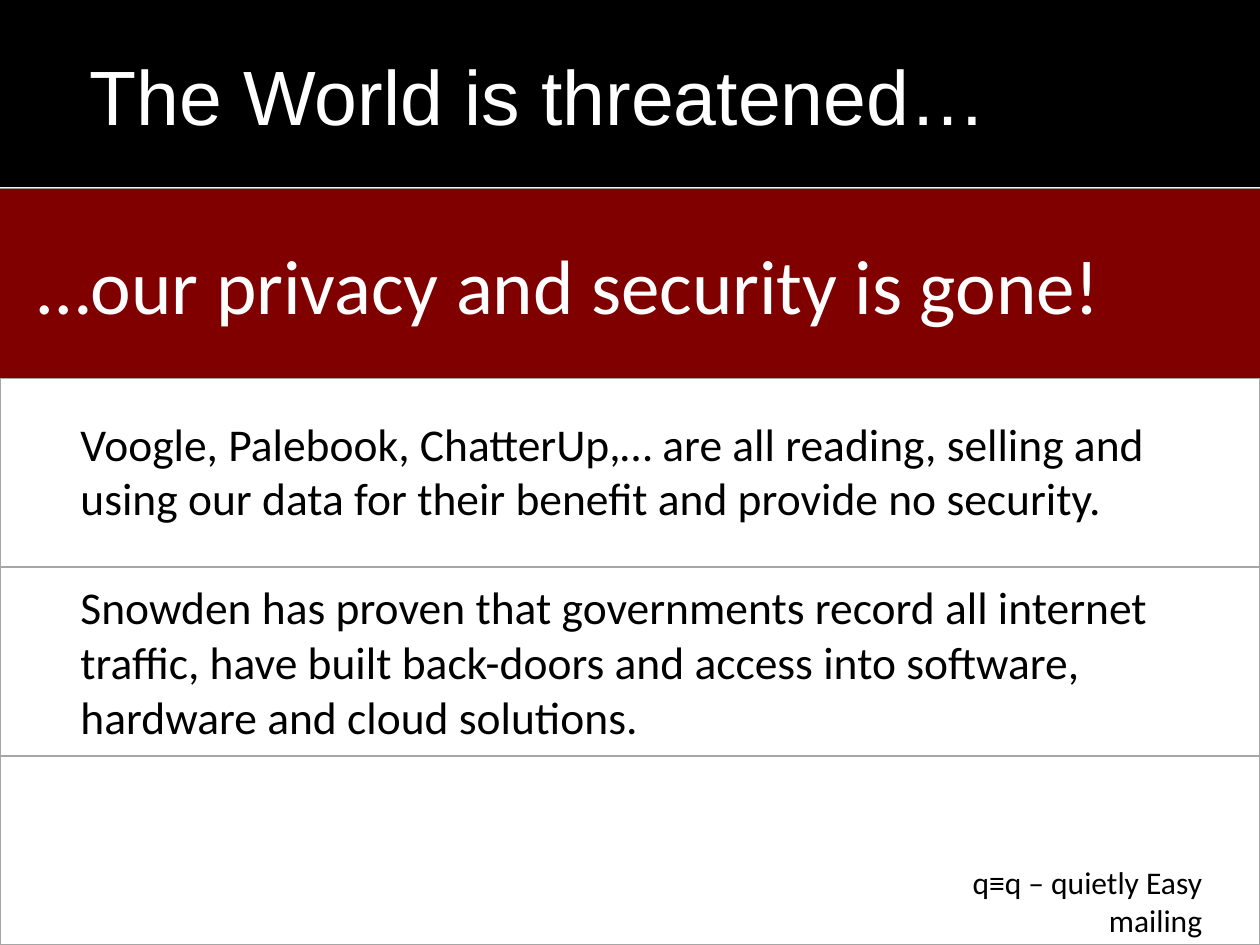
from pptx import Presentation
from pptx.dml.color import RGBColor
from pptx.enum.shapes import MSO_CONNECTOR, MSO_SHAPE
from pptx.enum.text import MSO_ANCHOR, MSO_AUTO_SIZE, PP_ALIGN
from pptx.oxml.ns import qn
from pptx.util import Inches, Pt
from lxml import etree

BLACK = RGBColor(0x00, 0x00, 0x00)
WHITE = RGBColor(0xFF, 0xFF, 0xFF)
RED = RGBColor(0x80, 0x00, 0x00)
GREY = RGBColor(0xA6, 0xA6, 0xA6)
PALE = RGBColor(0xF2, 0xF2, 0xF2)
WIDE, ROW = 10, 1.5


def write(shape, text, size=26, font="Calibri", color=BLACK,
          align=PP_ALIGN.LEFT, anchor=MSO_ANCHOR.TOP, left=0.1):
    frame = shape.text_frame
    frame.word_wrap = True
    frame.auto_size = MSO_AUTO_SIZE.NONE
    frame.vertical_anchor = anchor
    frame.margin_left = Inches(left)
    para = frame.paragraphs[0]
    para.alignment = align
    run = para.add_run()
    run.text = text
    run.font.size = Pt(size)
    run.font.name = font
    run.font.color.rgb = color


deck = Presentation()
deck.slide_width, deck.slide_height = Inches(WIDE), Inches(5 * ROW)
slide = deck.slides.add_slide(deck.slide_layouts[5])
shapes = slide.shapes

for row, color, width in [(1, PALE, 2), (2, GREY, 1), (3, GREY, 1), (4, GREY, 1)]:
    y = Inches(row * ROW)
    rule = shapes.add_connector(MSO_CONNECTOR.STRAIGHT, 0, y, Inches(WIDE), y)
    rule.line.color.rgb = color
    rule.line.width = Pt(width)
    etree.SubElement(rule._element.spPr, qn("a:effectLst"))

frame = shapes.add_shape(MSO_SHAPE.RECTANGLE, 0, Inches(ROW), Inches(WIDE), Inches(4 * ROW))
frame.shadow.inherit = False
frame.fill.background()
frame.line.color.rgb = GREY
frame.line.width = Pt(1)

band = shapes.add_shape(MSO_SHAPE.RECTANGLE, 0, Inches(ROW), Inches(WIDE), Inches(ROW))
band.shadow.inherit = False
band.fill.solid()
band.fill.fore_color.rgb = RED
band.line.fill.background()
write(band, "…our privacy and security is gone!", size=44, color=WHITE,
      anchor=MSO_ANCHOR.MIDDLE, left=0.3)

title = shapes.title
title.left, title.top, title.width, title.height = 0, 0, Inches(WIDE), Inches(ROW)
title.fill.solid()
title.fill.fore_color.rgb = BLACK
write(title, "The World is threatened…", size=44, font="Arial", color=WHITE,
      anchor=MSO_ANCHOR.MIDDLE, left=0.71)

notes = [
    (3.25, 0.98, "Voogle, Palebook, ChatterUp,… are all reading, selling and "
     "using our data for their benefit and provide no security."),
    (4.55, 1.41, "Snowden has proven that governments record all internet "
     "traffic, have built back-doors and access into software, "
     "hardware and cloud solutions."),
]
for top, height, text in notes:
    box = shapes.add_textbox(Inches(0.54), Inches(top), Inches(9.1), Inches(height))
    write(box, text)

foot = shapes.add_textbox(Inches(6.9), Inches(6.95), Inches(2.74), Inches(0.4))
write(foot, "q≡q – quietly Easy mailing", size=18, align=PP_ALIGN.RIGHT,
      anchor=MSO_ANCHOR.MIDDLE)

deck.save("out.pptx")
